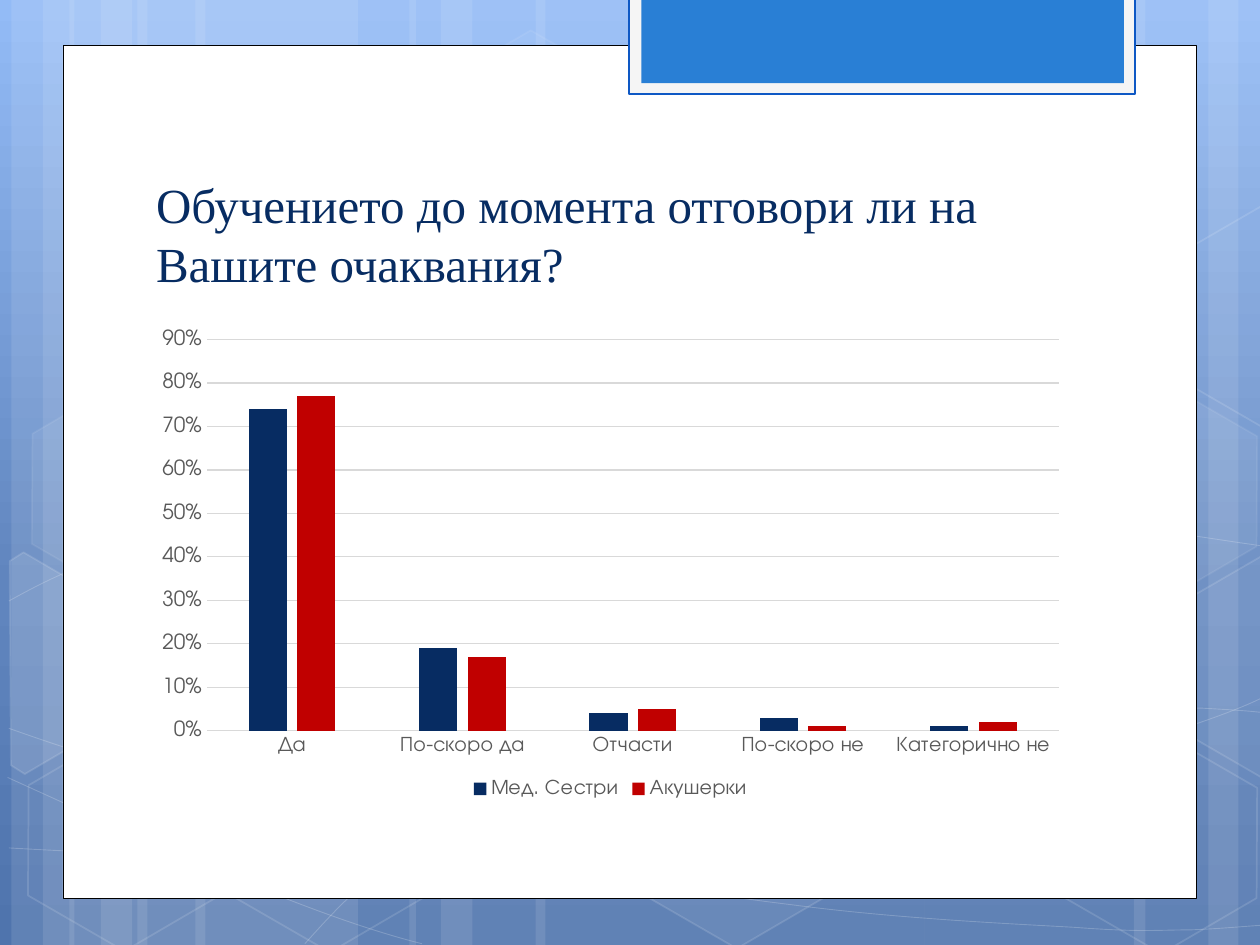
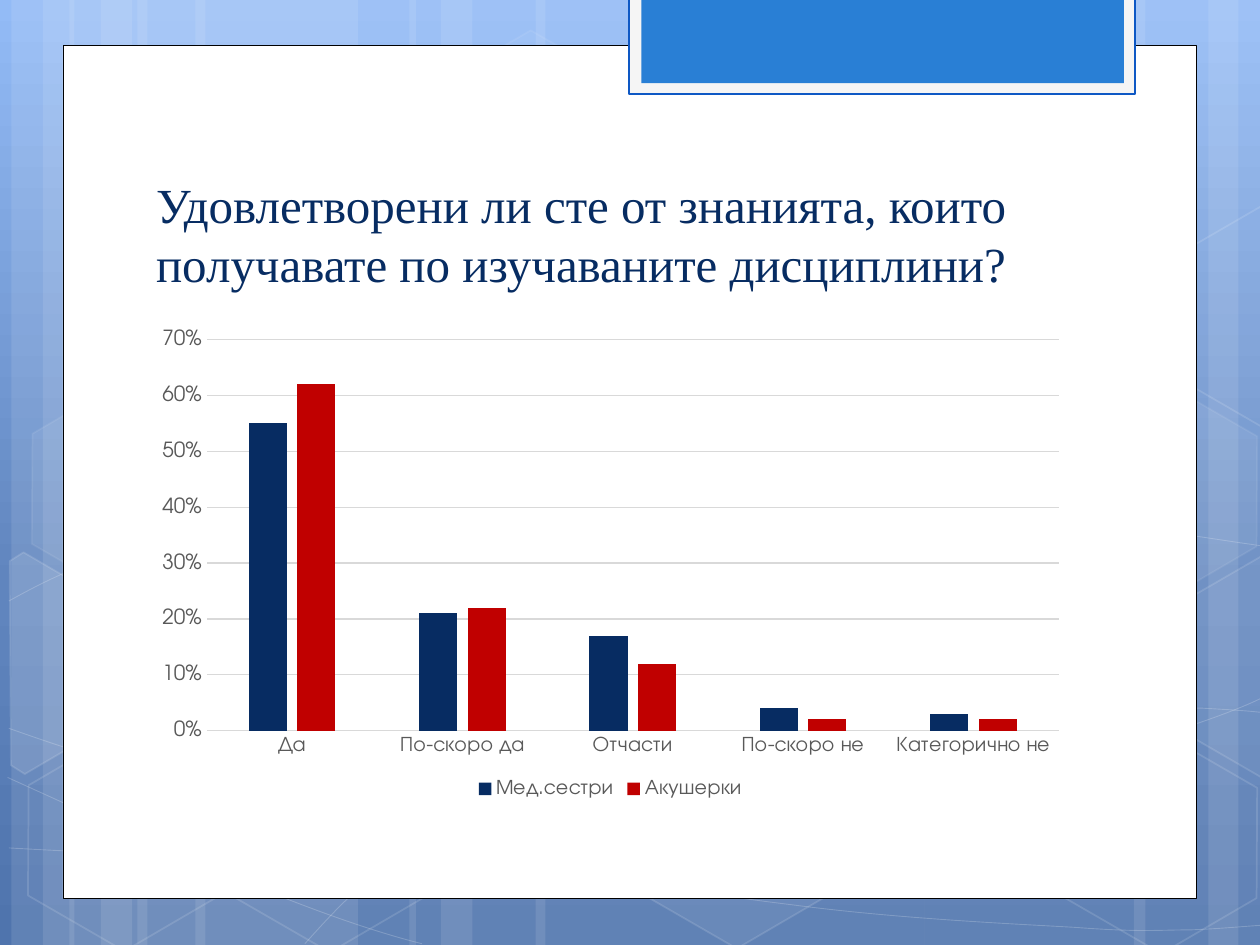
from dataclasses import dataclass
from math import cos, radians, sin
from typing import Optional

from lxml.etree import SubElement
from pptx import Presentation
from pptx.chart.data import CategoryChartData as ChartData
from pptx.dml.color import RGBColor as RGB
from pptx.enum.chart import XL_CHART_TYPE as Kind
from pptx.enum.chart import XL_LEGEND_POSITION as Side
from pptx.enum.chart import XL_TICK_MARK as Tick
from pptx.enum.shapes import MSO_SHAPE as Form
from pptx.enum.text import MSO_ANCHOR as Anchor
from pptx.oxml.ns import qn
from pptx.util import Inches, Pt

COLORS = {
    "white": "FFFFFF", "black": "000000", "pale": "F5F5F5",
    "edge": "0E58C4", "blue": "297FD5", "navy": "072C62",
    "red": "C00000", "gray": "595959", "grid": "D9D9D9",
    "sky": "93BBF6", "mid": "6085BE", "deep": "4F74AD",
}
TITLE_FONT = "Times New Roman"
CHART_FONT = "TeX Gyre Adventor"
TILT = 30
Point = tuple[float, float]


@dataclass
class Paint:
    """Fill and line; alphas are percentages of opacity."""
    fill: Optional[str] = None
    alpha: int = 100
    line: Optional[str] = None
    width: float = 1
    fade: int = 100


@dataclass
class Box:
    left: float
    top: float
    width: float
    height: float
    paint: Paint


@dataclass
class Hexa:
    left: float
    top: float
    fill: int
    line: int


@dataclass
class Part:
    """Hexagon cut off by the slide's edge, tilted about its center."""
    center: Point
    points: list[Point]
    fill: int


@dataclass
class Curve:
    """Start point, then cubic segments (6 numbers) or straight ones (2)."""
    start: Point
    bends: list[tuple[float, ...]]


@dataclass
class Survey:
    title: str
    names: tuple[str, str]
    values: tuple[list[float], list[float]]
    top: float


# Backdrop
BLEND = [(0, "sky"), (62, "mid"), (100, "deep")]
STRIPES = [
    (1.09, 1.75), (0.09, 0.5), (0.34, 0.83), (1.55, 1.75), (0.55, 0.5), (0.8, 0.83),
    (7.34, 1.75), (9.59, 0.5), (9, 0.83), (4.25, 3.09), (3.25, 0.5), (3.5, 0.83),
]
CURVES = [
    Curve((0.07, 6.73), [
        (0.61, 6.76, 1.15, 6.79, 1.9, 6.78), (2.65, 6.77, 3.58, 6.75, 4.58, 6.65),
        (5.58, 6.55, 7, 6.36, 7.92, 6.17), (8.83, 5.98, 9.77, 5.68, 10.07, 5.51)]),
    Curve((0.07, 4.77), [
        (0.36, 4.61, 0.65, 4.46, 1.21, 4.31), (1.78, 4.16, 2.59, 3.94, 3.47, 3.87),
        (4.36, 3.8, 5.44, 3.79, 6.54, 3.87), (7.64, 3.95, 9.47, 4.26, 10.07, 4.34)]),
    Curve((0.06, 6.17), [(1.27, 6.72, 2.47, 7.27, 3.35, 7.49)]),
    Curve((0.07, 5.78), [
        (0.38, 5.89, 0.7, 6, 1.28, 6.16), (1.86, 6.31, 2.73, 6.56, 3.57, 6.73),
        (4.4, 6.9, 5.45, 7.08, 6.28, 7.18), (7.11, 7.29, 8, 7.33, 8.53, 7.36),
        (9.06, 7.4, 9.19, 7.38, 9.45, 7.38), (9.71, 7.37, 9.89, 7.35, 10.07, 7.34)]),
    Curve((2.42, 7.49), [
        (2.6, 7.29, 2.78, 7.09, 3.02, 6.91), (3.26, 6.72, 3.6, 6.53, 3.88, 6.39),
        (4.16, 6.25, 4.33, 6.19, 4.69, 6.09), (5.06, 5.99, 5.73, 5.85, 6.08, 5.78),
        (6.44, 5.71, 6.49, 5.71, 6.8, 5.69), (7.11, 5.66, 7.6, 5.63, 7.94, 5.62),
        (8.29, 5.61, 8.86, 5.62, 8.86, 5.62), (9.53, 5.62),
        (9.71, 5.63, 9.88, 5.64, 9.97, 5.65), (10.06, 5.66, 10.03, 5.65, 10.06, 5.66)]),
]
TILES = [
    Hexa(3.34, 0.36, 4, 8),
    Hexa(4.97, 5.89, 6, 12),
    Part((0.36, 5.36), [(0.08, 4.45), (0.19, 4.38), (0.96, 4.83),
                        (0.95, 5.7), (0.2, 6.14), (0.09, 6.07)], 10),
    Hexa(0.11, 5.91, 0, 12),
    Hexa(0.14, 3.12, 7, 8),
    Hexa(1.74, 5.92, 0, 12),
    Hexa(7.53, 4.53, 10, 12),
    Hexa(8.34, 5.93, 0, 12),
    Hexa(8.34, 3.14, 7, 8),
    Part((9.85, 5.2), [(9.26, 4.85), (10.02, 4.41), (10.09, 4.46),
                       (10.09, 6.13), (10.02, 6.17), (9.26, 5.73)], 4),
    Part((9.85, 2.41), [(9.26, 2.07), (10.02, 1.63), (10.1, 1.68),
                        (10.09, 3.35), (10.02, 3.39), (9.26, 2.95)], 0),
]
# Page and tab at the top
PANELS = [
    Box(0.5, 0.36, 9, 6.77, Paint("white", line="black", width=0.5)),
    Box(4.99, -0.02, 4.02, 0.77, Paint("pale", line="edge", width=1.25)),
    Box(5.09, -0.02, 3.83, 0.68, Paint("blue")),
]
# Survey content
ANSWERS = ["Да", "По-скоро да", "Отчасти", "По-скоро не", "Категорично не"]
SURVEYS = [
    Survey("Обучението до момента отговори ли на Вашите очаквания?",
           ("Мед. Сестри", "Акушерки"),
           ([0.74, 0.19, 0.04, 0.03, 0.01], [0.77, 0.17, 0.05, 0.01, 0.02]), 0.9),
    Survey("Удовлетворени ли сте от знанията, които получавате по изучаваните дисциплини?",
           ("Мед.сестри", "Акушерки"),
           ([0.55, 0.21, 0.17, 0.04, 0.03], [0.62, 0.22, 0.12, 0.02, 0.02]), 0.7),
]


def rgb(name: str) -> RGB:
    return RGB.from_string(COLORS[name])


def veil(node, alpha: int) -> None:
    """Make the solid colour inside node partly transparent."""
    if alpha < 100:
        color = next(node.iter(qn("a:srgbClr")))
        SubElement(color, qn("a:alpha"), val=str(alpha * 1000))


def coat(shape, paint: Paint) -> None:
    shape.shadow.inherit = False
    props = shape.element.spPr
    if paint.fill and paint.alpha:
        shape.fill.solid()
        shape.fill.fore_color.rgb = rgb(paint.fill)
        veil(props.find(qn("a:solidFill")), paint.alpha)
    else:
        shape.fill.background()
    if paint.line:
        shape.line.color.rgb = rgb(paint.line)
        shape.line.width = Pt(paint.width)
        veil(props.find(qn("a:ln")), paint.fade)
    else:
        shape.line.fill.background()


def add_box(shapes, box: Box, form=Form.RECTANGLE):
    shape = shapes.add_shape(form, Inches(box.left), Inches(box.top),
                             Inches(box.width), Inches(box.height))
    coat(shape, box.paint)
    return shape


def add_path(shapes, points: list[Point], close: bool, paint: Paint):
    spots = [(Inches(x), Inches(y)) for x, y in points]
    pen = shapes.build_freeform(*spots[0], scale=1.0)
    pen.add_line_segments(spots[1:], close=close)
    shape = pen.convert_to_shape()
    coat(shape, paint)
    return shape


def add_curve(shapes, curve: Curve) -> None:
    points = [curve.start]
    for bend in curve.bends:
        points += zip(bend[::2], bend[1::2])
    shape = add_path(shapes, points, False, Paint(line="white", width=0.5, fade=20))
    # Join each three straight steps into one cubic segment
    steps = iter(list(shape.element.iter(qn("a:lnTo"))))
    for bend in curve.bends:
        first = next(steps)
        if len(bend) == 6:
            first.tag = qn("a:cubicBezTo")
            for step in (next(steps), next(steps)):
                first.append(step[0])
                step.getparent().remove(step)


def add_hexa(shapes, hexa: Hexa) -> None:
    paint = Paint("white", hexa.fill, "white", 1, hexa.line)
    shape = add_box(shapes, Box(hexa.left, hexa.top, 1.75, 1.52, paint), Form.HEXAGON)
    shape.adjustments[0] = 0.285
    shape.rotation = TILT


def add_part(shapes, part: Part) -> None:
    (cx, cy), c, s = part.center, cos(radians(TILT)), sin(radians(TILT))
    flat = [(cx + (x - cx) * c + (y - cy) * s, cy - (x - cx) * s + (y - cy) * c)
            for x, y in part.points]
    shape = add_path(shapes, flat, True, Paint("white", part.fill, "white", 1, 12))
    shape.rotation = TILT


def add_base(slide) -> None:
    # Gradient
    fill = slide.background.fill
    fill.gradient()
    fill.gradient_angle = 270
    stops = slide.element.find(".//" + qn("a:gsLst"))
    for stop in list(stops):
        stops.remove(stop)
    for place, name in BLEND:
        stop = SubElement(stops, qn("a:gs"), pos=str(place * 1000))
        SubElement(stop, qn("a:srgbClr"), val=COLORS[name])
    # Stripes, curves and hexagons in one group
    shapes = slide.shapes.add_group_shape().shapes
    for left, width in STRIPES:
        add_box(shapes, Box(left, 0, width, 7.5, Paint("white", 10)))
    for curve in CURVES:
        add_curve(shapes, curve)
    for tile in TILES:
        if isinstance(tile, Hexa):
            add_hexa(shapes, tile)
        else:
            add_part(shapes, tile)
    for panel in PANELS:
        add_box(slide.shapes, panel)


def add_title(slide, text: str) -> None:
    frame = slide.shapes.add_textbox(Inches(1.14), Inches(1.12),
                                     Inches(7.68), Inches(1.25)).text_frame
    frame.word_wrap = True
    frame.vertical_anchor = Anchor.BOTTOM
    frame.text = text
    font = frame.paragraphs[0].runs[0].font
    font.name, font.size = TITLE_FONT, Pt(28)
    font.color.rgb = rgb("navy")


def set_font(font, size: float, color: str) -> None:
    font.name, font.size = CHART_FONT, Pt(size)
    font.color.rgb = rgb(color)


def add_bars(slide, survey: Survey) -> None:
    data = ChartData(number_format="0%")
    data.categories = ANSWERS
    for name, values in zip(survey.names, survey.values):
        data.add_series(name, values)
    chart = slide.shapes.add_chart(Kind.COLUMN_CLUSTERED, Inches(1.14), Inches(2.54),
                                   Inches(7.41), Inches(3.84), data).chart
    set_font(chart.font, 10, "black")
    chart.has_title = False
    # Columns
    plot = chart.plots[0]
    plot.gap_width, plot.overlap, plot.vary_by_categories = 219, -27, False
    for series, color in zip(plot.series, ("navy", "red")):
        series.format.fill.solid()
        series.format.fill.fore_color.rgb = rgb(color)
        series.invert_if_negative = False
    # Axes
    cats, vals = chart.category_axis, chart.value_axis
    for axis in (cats, vals):
        axis.major_tick_mark = axis.minor_tick_mark = Tick.NONE
        set_font(axis.tick_labels.font, 11.9, "gray")
    vals.minimum_scale, vals.maximum_scale, vals.major_unit = 0, survey.top, 0.1
    vals.tick_labels.number_format = "0%"
    vals.tick_labels.number_format_is_linked = False
    vals.format.line.fill.background()
    for line in (cats.format.line, vals.major_gridlines.format.line):
        line.color.rgb = rgb("grid")
        line.width = Pt(0.75)
    # Legend
    chart.has_legend = True
    chart.legend.position = Side.BOTTOM
    chart.legend.include_in_layout = False
    set_font(chart.legend.font, 11.9, "gray")


def main() -> None:
    deck = Presentation()
    deck.slide_width, deck.slide_height = Inches(10), Inches(7.5)
    for survey in SURVEYS:
        slide = deck.slides.add_slide(deck.slide_layouts[6])
        add_base(slide)
        add_title(slide, survey.title)
        add_bars(slide, survey)
    deck.save("out.pptx")


if __name__ == "__main__":
    main()
